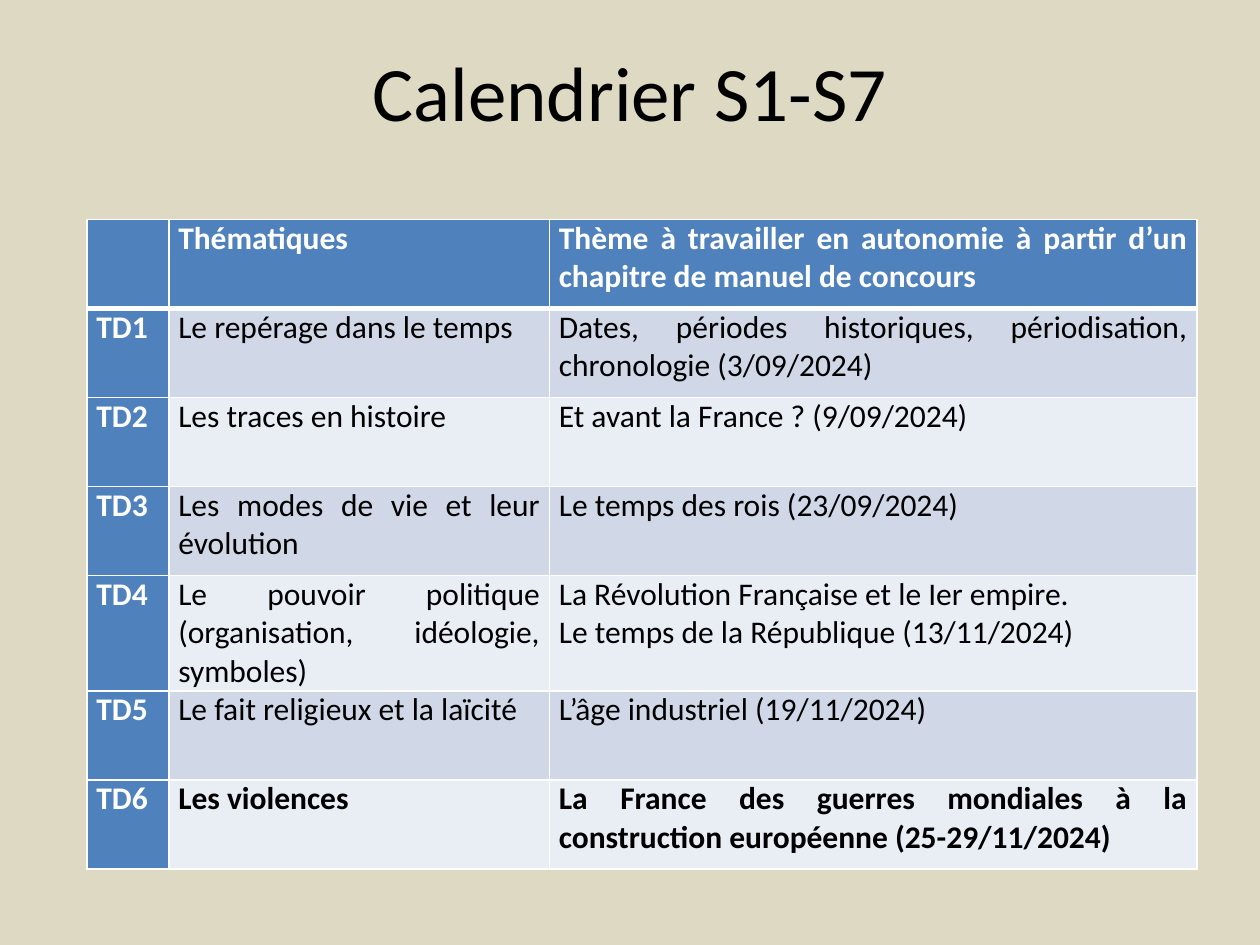
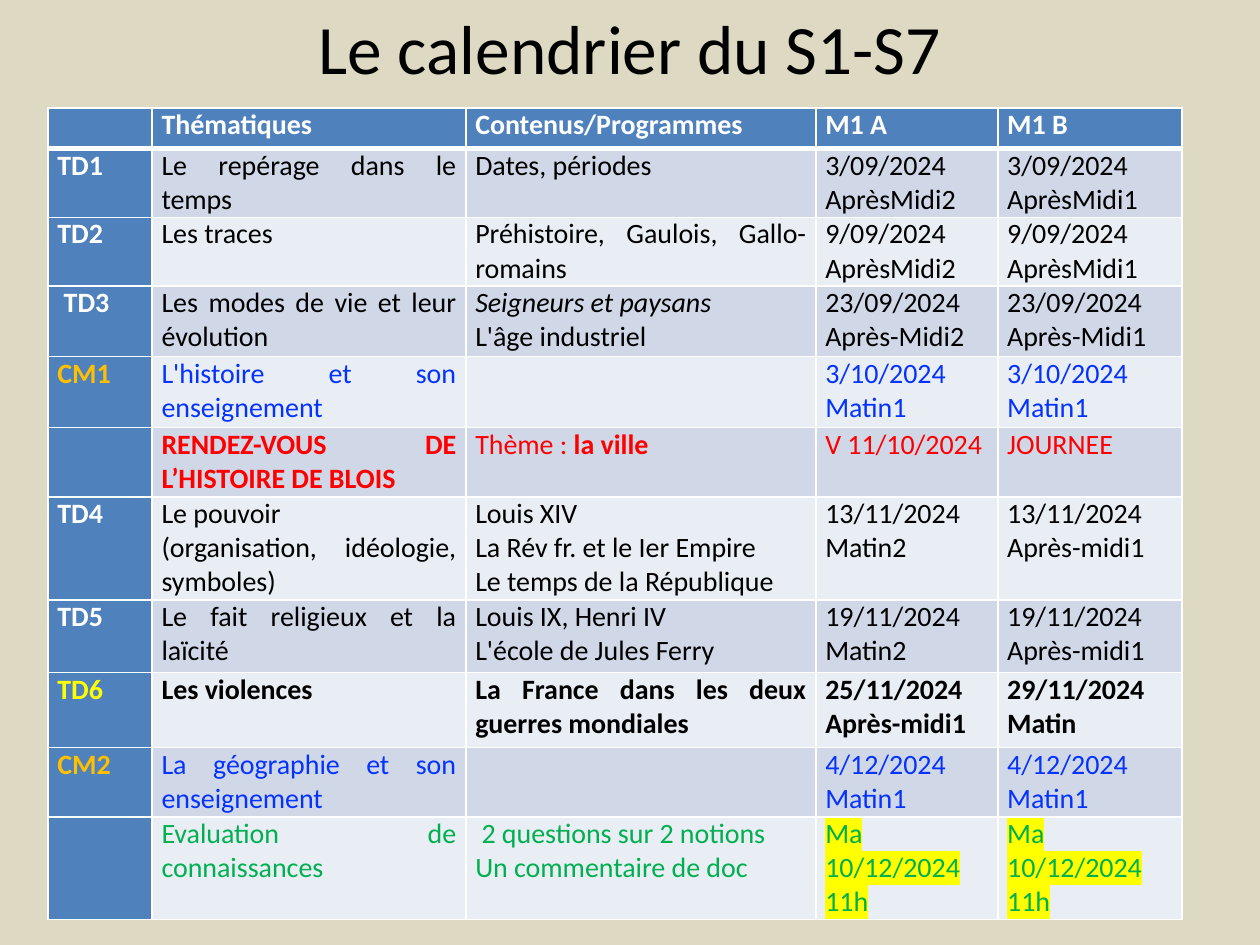
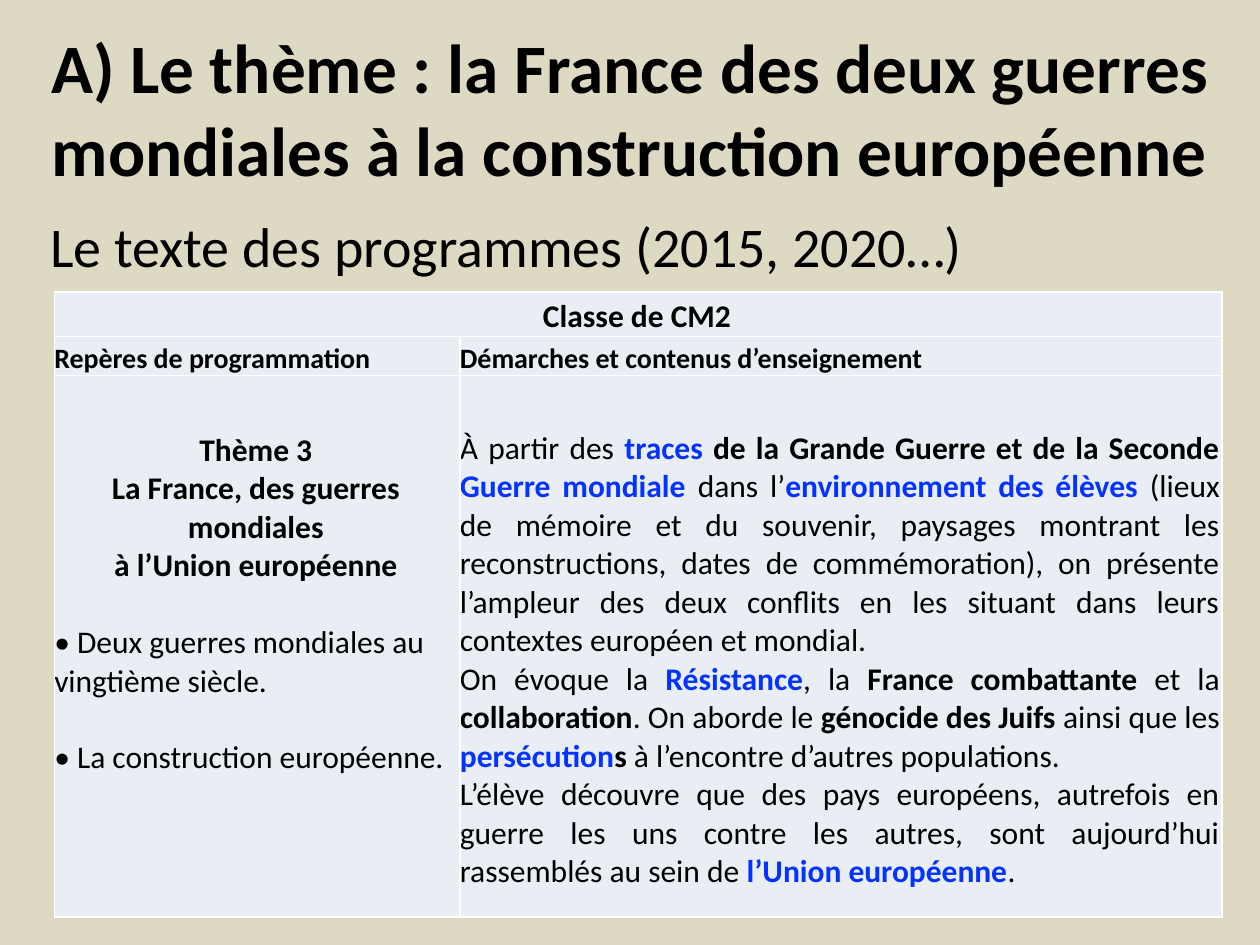
from pptx import Presentation
from pptx.dml.color import RGBColor
from pptx.enum.text import MSO_ANCHOR, MSO_AUTO_SIZE, PP_ALIGN
from pptx.oxml.ns import qn
from pptx.util import Pt
from lxml import etree

LEFT, MID, JUST = PP_ALIGN.LEFT, PP_ALIGN.CENTER, PP_ALIGN.JUSTIFY
CENTRE, NO_FIT = MSO_ANCHOR.MIDDLE, MSO_AUTO_SIZE.NONE
FONT = "Calibri"
HUES = {
    "sand": "DDD9C3", "head": "4F81BD", "odd": "D0D8E8", "even": "E9EDF4",
    "white": "FFFFFF", "black": "000000", "blue": "0432FF", "red": "FF0000",
    "green": "00B050", "gold": "FFC000", "yellow": "FFFF00",
}

# Text marks: *bold*, *~bold blue*, */italic*, *=highlighted*; \n starts a paragraph
# Rows: label, label colour, text colour, bold text, cells
PLAN = {
    "title": "Calendrier S1-S7", "size": 44, "title_box": (36, 11.5, 648, 81),
    "spot": (49.7, 125.3), "cols": (46.8, 217.5, 370), "rows": [50.9] * 7, "text": 18,
    "heads": ("Thématiques",
              "Thème à travailler en autonomie à partir d’un chapitre de manuel de concours"),
    "body": [
        ("TD1", "white", "black", False, (
            "Le repérage dans le temps",
            "Dates, périodes historiques, périodisation, chronologie (3/09/2024)")),
        ("TD2", "white", "black", False, (
            "Les traces en histoire", "Et avant la France ? (9/09/2024)")),
        ("TD3", "white", "black", False, (
            "Les modes de vie et leur évolution", "Le temps des rois (23/09/2024)")),
        ("TD4", "white", "black", False, (
            "Le pouvoir politique (organisation, idéologie, symboles)",
            "La Révolution Française et le Ier empire.\n"
            "Le temps de la République (13/11/2024)")),
        ("TD5", "white", "black", False, (
            "Le fait religieux et la laïcité", "L’âge industriel (19/11/2024)")),
        ("TD6", "white", "black", True, (
            "Les violences",
            "La France des guerres mondiales à la construction européenne (25-29/11/2024)")),
    ],
}
DATES = {
    "title": "Le calendrier du S1-S7", "size": 39.6, "title_box": (36, 0, 648, 54),
    "spot": (27.4, 61.6), "cols": (59.5, 179.3, 200, 104, 105.2), "text": 16,
    "rows": (23.3, 39.3, 39.2, 40.5, 40.5, 39.6, 59, 41.5, 42.8, 39.6, 46.8),
    "heads": ("Thématiques", "Contenus/Programmes", "M1 A", "M1 B"),
    "body": [
        ("TD1", "white", "black", False, (
            "Le repérage dans le temps", "Dates, périodes",
            "3/09/2024\nAprèsMidi2", "3/09/2024\nAprèsMidi1")),
        ("TD2", "white", "black", False, (
            "Les traces", "Préhistoire, Gaulois, Gallo-romains",
            "9/09/2024\nAprèsMidi2", "9/09/2024\nAprèsMidi1")),
        (" TD3", "white", "black", False, (
            "Les modes de vie et leur évolution",
            "*/Seigneurs et paysans*\nL'âge industriel",
            "23/09/2024\nAprès-Midi2", "23/09/2024\nAprès-Midi1")),
        ("CM1", "gold", "blue", False, (
            "L'histoire et son enseignement", "",
            "3/10/2024\nMatin1", "3/10/2024\nMatin1")),
        ("", "white", "red", False, (
            "*RENDEZ-VOUS DE L’HISTOIRE DE BLOIS*", "Thème : *la ville*",
            "V 11/10/2024", "JOURNEE")),
        ("TD4", "white", "black", False, (
            "Le pouvoir\n(organisation, idéologie, symboles)",
            "Louis XIV\nLa Rév fr. et le Ier Empire\nLe temps de la République",
            "13/11/2024\nMatin2", "13/11/2024\nAprès-midi1")),
        ("TD5", "white", "black", False, (
            "Le fait religieux et la laïcité",
            "Louis IX, Henri IV\nL'école de Jules Ferry",
            "19/11/2024\nMatin2", "19/11/2024\nAprès-midi1")),
        ("TD6", "yellow", "black", True, (
            "Les violences", "La France dans les deux guerres mondiales",
            "25/11/2024\nAprès-midi1", "29/11/2024\nMatin")),
        ("CM2", "gold", "blue", False, (
            "La géographie et son enseignement", "",
            "4/12/2024\nMatin1", "4/12/2024\nMatin1")),
        ("", "white", "green", False, (
            "Evaluation de connaissances",
            " 2 questions sur 2 notions\nUn commentaire de doc",
            "*=Ma 10/12/2024 11h*", "*=Ma 10/12/2024 11h*")),
    ],
}
THEME = {
    "title": "A) Le thème : la France des deux guerres mondiales "
             "à la construction européenne",
    "size": 39.6, "title_box": (0, 31, 720, 61),
    "lead": "Le texte des programmes (2015, 2020…)", "lead_box": (21.6, 117.4, 648, 50),
    "spot": (31, 167), "cols": (231.8, 435.6), "rows": (25.2, 22.3, 309.6),
    "class": "Classe de CM2",
    "heads": ("Repères de programmation", "Démarches et contenus d’enseignement"),
    "topic": "Thème 3\nLa France, des guerres mondiales\nà l’Union européenne",
    "points": ("• Deux guerres mondiales au vingtième siècle.",
               "• La construction européenne."),
    "aims": "À partir des *~traces** de la Grande Guerre et de la Seconde *"
            "*~Guerre mondiale *dans l’*~environnement des élèves *(lieux de mémoire "
            "et du souvenir, paysages montrant les reconstructions, dates de "
            "commémoration), on présente l’ampleur des deux conflits en les situant "
            "dans leurs contextes européen et mondial.\n"
            "On évoque la *~Résistance*, la *France combattante* et la *collaboration*. "
            "On aborde le *génocide des Juifs *ainsi que les *~persécution**s* "
            "à l’encontre d’autres populations.\n"
            "L’élève découvre que des pays européens, autrefois en guerre les uns "
            "contre les autres, sont aujourd’hui rassemblés au sein de "
            "*~l’Union européenne*.",
}


def rgb(hue):
    return RGBColor.from_string(HUES[hue])


def style(font, size, hue="black", bold=False):
    font.name, font.size, font.bold = FONT, Pt(size), bold
    font.color.rgb = rgb(hue)


def mark(run, sign):
    """Apply the style that a text mark stands for."""
    if sign == "/":
        run.font.italic = True
    elif sign == "=":
        light = etree.SubElement(run._r.get_or_add_rPr(), qn("a:highlight"))
        etree.SubElement(light, qn("a:srgbClr"), val=HUES["yellow"])
    else:
        run.font.bold = True
        if sign == "~":
            run.font.color.rgb = rgb("blue")


def write(frame, text, size, hue="black", bold=False, align=JUST, fresh=True):
    """Write the paragraphs of a text and return them."""
    made = []
    for line in text.split("\n"):
        para = frame.paragraphs[0] if fresh and not made else frame.add_paragraph()
        para.alignment = align
        style(para.font, size, hue, bold)
        for i, part in enumerate(line.split("*")):
            if not part:
                continue
            sign = part[0] if i % 2 and part[0] in "~/=" else ""
            run = para.add_run()
            run.text = part[len(sign):]
            if i % 2:
                mark(run, sign)
        made.append(para)
    return made


def edge(cell, top=1, base=1):
    """Draw the white borders of a cell."""
    props = cell._tc.get_or_add_tcPr()
    sides = (("a:lnL", 1), ("a:lnR", 1), ("a:lnT", top), ("a:lnB", base))
    for spot, (tag, wide) in enumerate(sides):
        line = etree.Element(qn(tag), w=str(Pt(wide)))
        fill = etree.SubElement(line, qn("a:solidFill"))
        etree.SubElement(fill, qn("a:srgbClr"), val=HUES["white"])
        props.insert(spot, line)


def paint(cell, hue, side, right):
    cell.fill.solid()
    cell.fill.fore_color.rgb = rgb(hue)
    cell.margin_left, cell.margin_right = Pt(side), Pt(right)
    cell.margin_top = cell.margin_bottom = 0


def add_page(deck, data, bold=False):
    page = deck.slides.add_slide(deck.slide_layouts[5])
    title = page.shapes.title
    title.left, title.top, title.width, title.height = map(Pt, data["title_box"])
    frame = title.text_frame
    frame.auto_size, frame.vertical_anchor = NO_FIT, CENTRE
    write(frame, data["title"], data["size"], bold=bold, align=MID)
    return page


def add_grid(page, data):
    cols, rows = data["cols"], data["rows"]
    grid = page.shapes.add_table(len(rows), len(cols), *map(Pt, data["spot"]),
                                 Pt(sum(cols)), Pt(sum(rows))).table
    grid.first_row = grid.horz_banding = False
    for col, wide in zip(grid.columns, cols):
        col.width = Pt(wide)
    for row, high in zip(grid.rows, rows):
        row.height = Pt(high)
    return grid


def add_dates(deck, data):
    """Add a calendar: blue header row and label column, banded body."""
    grid = add_grid(add_page(deck, data), data)
    rows = [("", "white", "white", True, data["heads"])] + data["body"]
    for r, (label, tint, hue, bold, texts) in enumerate(rows):
        band = "head" if r == 0 else "odd" if r % 2 else "even"
        for c, text in enumerate((label, *texts)):
            cell = grid.cell(r, c)
            paint(cell, band if c else "head", 5.4, 5.4)
            edge(cell, top=3 if r == 1 else 1, base=1 if r else 3)
            look = (hue, bold) if c else (tint, True)
            write(cell.text_frame, text, data["text"], *look)


def add_theme(deck, data):
    page = add_page(deck, data, bold=True)

    # Lead line
    lead = page.shapes.add_textbox(*map(Pt, data["lead_box"])).text_frame
    lead.word_wrap = True
    write(lead, data["lead"], 32, align=LEFT)

    # Programme table
    grid = add_grid(page, data)
    for cell in grid.iter_cells():
        paint(cell, "even", 0, 1.4)
        edge(cell)
    grid.cell(0, 0).merge(grid.cell(0, 1))
    heads = write(grid.cell(0, 0).text_frame, data["class"], 18, bold=True, align=MID)
    for c, text in enumerate(data["heads"]):
        heads += write(grid.cell(1, c).text_frame, text, 16, bold=True, align=LEFT)
    for para in heads:
        para.line_spacing = 1.15

    # Theme with its points, then the aims
    topic, aims = grid.cell(2, 0), grid.cell(2, 1)
    topic.margin_top, aims.margin_top = Pt(32), Pt(31)
    write(topic.text_frame, data["topic"], 18, bold=True, align=MID)
    for text in data["points"]:
        para, = write(topic.text_frame, text, 18, align=LEFT, fresh=False)
        para.space_before = Pt(22)
    write(aims.text_frame, data["aims"], 18)


def main():
    deck = Presentation()
    deck.slide_width, deck.slide_height = Pt(720), Pt(540)
    back = deck.slide_master.background.fill
    back.solid()
    back.fore_color.rgb = rgb("sand")
    add_dates(deck, PLAN)
    add_dates(deck, DATES)
    add_theme(deck, THEME)
    deck.save("out.pptx")


if __name__ == "__main__":
    main()
